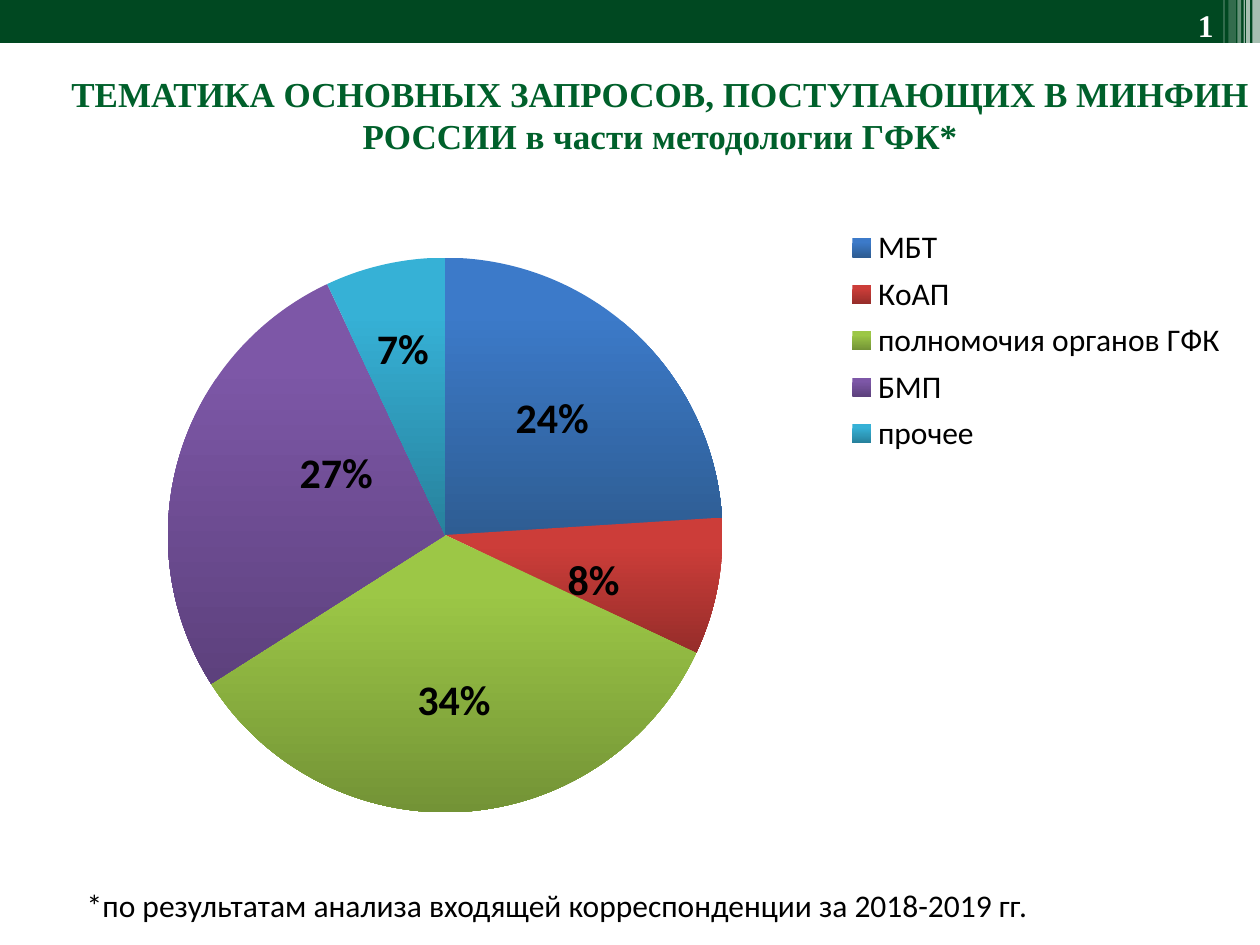
import pptx
import pptx.chart.data
import pptx.dml.color
import pptx.enum.chart
import pptx.enum.shapes
import pptx.enum.text
import pptx.oxml
import pptx.oxml.ns
import pptx.util
from lxml import etree

WIDTH, HEIGHT = 10, 7.5
COLORS = {"band": "004821", "title": "00602B", "white": "FFFFFF", "black": "000000"}

# left, width, height, opacity in percent
STRIPES = [
    (9.94, 0.06, 0.34, 65), (9.89, 0.03, 0.34, 65), (9.87, 0.01, 0.34, 60),
    (9.82, 0.03, 0.34, 40), (9.75, 0.06, 0.36, 20), (9.71, 0.01, 0.36, 30),
]
# topic, percent, gradient top and bottom, label shift as shares of the chart
TOPICS = [
    ("МБТ", 24, "3C7AC9", "2E5D93", (0.01, -0.02)),
    ("КоАП", 8, "CC3D39", "962D2A", (0.01, 0.03)),
    ("полномочия органов ГФК", 34, "9CC746", "739336", (0, 0.04)),
    ("БМП", 27, "7D57A7", "5D417D", (0.02, -0.03)),
    ("прочее", 7, "36B1D6", "27819C", (-0.01, -0.07)),
]
TEXTS = [
    {"text": "*по результатам анализа входящей корреспонденции за 2018-2019 гг.",
     "at": (0.59, 6.98, 7.74, 0.4), "wrap": False, "align": "LEFT", "color": "black",
     "font": {"name": "Calibri", "size": pptx.util.Pt(18)}},
    {"text": "ТЕМАТИКА ОСНОВНЫХ ЗАПРОСОВ, ПОСТУПАЮЩИХ В МИНФИН РОССИИ "
             "в части методологии ГФК*",
     "at": (0.12, 0.53, 10.24, 0.77), "wrap": True, "align": "CENTER", "color": "title",
     "font": {"name": "Times New Roman", "size": pptx.util.Pt(20), "bold": True}},
    {"text": "1",
     "at": (9.41, 0, 0.33, 0.4), "wrap": False, "align": "LEFT", "color": "white",
     "font": {"name": "Times New Roman", "size": pptx.util.Pt(18), "bold": True}},
]
CHART_AT = (0.28, 1.47, 9.57, 5.61)
PIE_LAYOUT = {"x": 0.11, "y": 0.1, "w": 0.46, "h": 0.79}
LEGEND_LAYOUT = {"x": 0.67, "y": 0.05, "w": 0.32, "h": 0.34}


def inches(values):
    return [pptx.util.Inches(value) for value in values]


def rgb(value):
    return pptx.dml.color.RGBColor.from_string(value)


def set_format(font, color, values):
    for name, value in values.items():
        setattr(font, name, value)
    font.color.rgb = rgb(color)


def add_bar(slide, at, color, opacity=100):
    bar = slide.shapes.add_shape(pptx.enum.shapes.MSO_SHAPE.RECTANGLE, *inches(at))
    bar.shadow.inherit = False
    bar.fill.solid()
    bar.fill.fore_color.rgb = rgb(color)
    bar.line.fill.background()
    if opacity < 100:
        value = bar.fill._xPr.find(".//" + pptx.oxml.ns.qn("a:srgbClr"))
        etree.SubElement(value, pptx.oxml.ns.qn("a:alpha"), val=str(opacity * 1000))


def add_text(slide, item):
    box = slide.shapes.add_textbox(*inches(item["at"]))
    box.text_frame.word_wrap = item["wrap"]
    para = box.text_frame.paragraphs[0]
    para.alignment = getattr(pptx.enum.text.PP_ALIGN, item["align"])
    span = para.add_run()
    span.text = item["text"]
    set_format(span.font, COLORS[item["color"]], item["font"])


def make_layout(values, modes=(), target=None):
    """Return a manual chart layout element."""
    layout = etree.Element(pptx.oxml.ns.qn("c:layout"))
    manual = etree.SubElement(layout, pptx.oxml.ns.qn("c:manualLayout"))
    entries = [("layoutTarget", target)] if target else []
    entries += [(mode, "edge") for mode in modes] + list(values.items())
    for name, value in entries:
        etree.SubElement(manual, pptx.oxml.ns.qn("c:" + name), val=str(value))
    return layout


def replace_layout(parent, layout, index):
    for old in parent.findall(pptx.oxml.ns.qn("c:layout")):
        parent.remove(old)
    parent.insert(index, layout)


def set_flag(element, name, value):
    for flag in element.findall(pptx.oxml.ns.qn("c:" + name)):
        flag.set("val", value)


def format_slice(point, top, bottom, shift):
    fill = point.format.fill
    fill.gradient()
    fill.gradient_angle = 270
    for stop, color, position in zip(fill.gradient_stops, (top, bottom), (0.2, 1)):
        stop.color.rgb = rgb(color)
        stop.position = position
    point.format.line.fill.background()

    label = point.data_label
    set_format(label.font, COLORS["black"],
               {"name": "Calibri", "size": pptx.util.Pt(24), "bold": True})
    label.position = pptx.enum.chart.XL_LABEL_POSITION.CENTER
    element = label._get_or_add_dLbl()
    set_flag(element, "showVal", "0")
    set_flag(element, "showPercent", "1")
    replace_layout(element, make_layout(dict(zip("xy", shift))), 1)


def add_pie(slide):
    data = pptx.chart.data.CategoryChartData(number_format="0")
    data.categories = [topic[0] for topic in TOPICS]
    data.add_series("Series 1", [topic[1] for topic in TOPICS])
    chart = slide.shapes.add_chart(
        pptx.enum.chart.XL_CHART_TYPE.PIE, *inches(CHART_AT), data).chart
    set_format(chart.font, COLORS["black"],
               {"name": "Calibri", "size": pptx.util.Pt(18)})
    chart.has_title = False
    chart.has_legend = True
    chart.legend.position = pptx.enum.chart.XL_LEGEND_POSITION.RIGHT
    chart.legend.include_in_layout = False

    plot = chart.plots[0]
    plot.vary_by_categories = True
    series = plot.series[0]
    labels = series.data_labels
    labels.show_value = False
    labels.show_percentage = True
    set_flag(labels._element, "showLeaderLines", "0")
    for index, (_, _, top, bottom, shift) in enumerate(TOPICS):
        format_slice(series.points[index], top, bottom, shift)

    area = chart._chartSpace.find(".//" + pptx.oxml.ns.qn("c:plotArea"))
    replace_layout(area, make_layout(PIE_LAYOUT, ("xMode", "yMode"), "inner"), 0)
    replace_layout(chart.legend._element,
                   make_layout(LEGEND_LAYOUT, ("xMode", "yMode")), 1)


def main():
    deck = pptx.Presentation()
    deck.slide_width, deck.slide_height = inches((WIDTH, HEIGHT))
    page = deck.slides.add_slide(deck.slide_layouts[6])
    add_bar(page, (0, 0, WIDTH, 0.34), COLORS["band"])
    for left, width, height, opacity in STRIPES:
        add_bar(page, (left, 0, width, height), COLORS["white"], opacity)
    add_pie(page)
    for item in TEXTS:
        add_text(page, item)
    deck.save("out.pptx")


if __name__ == "__main__":
    main()
